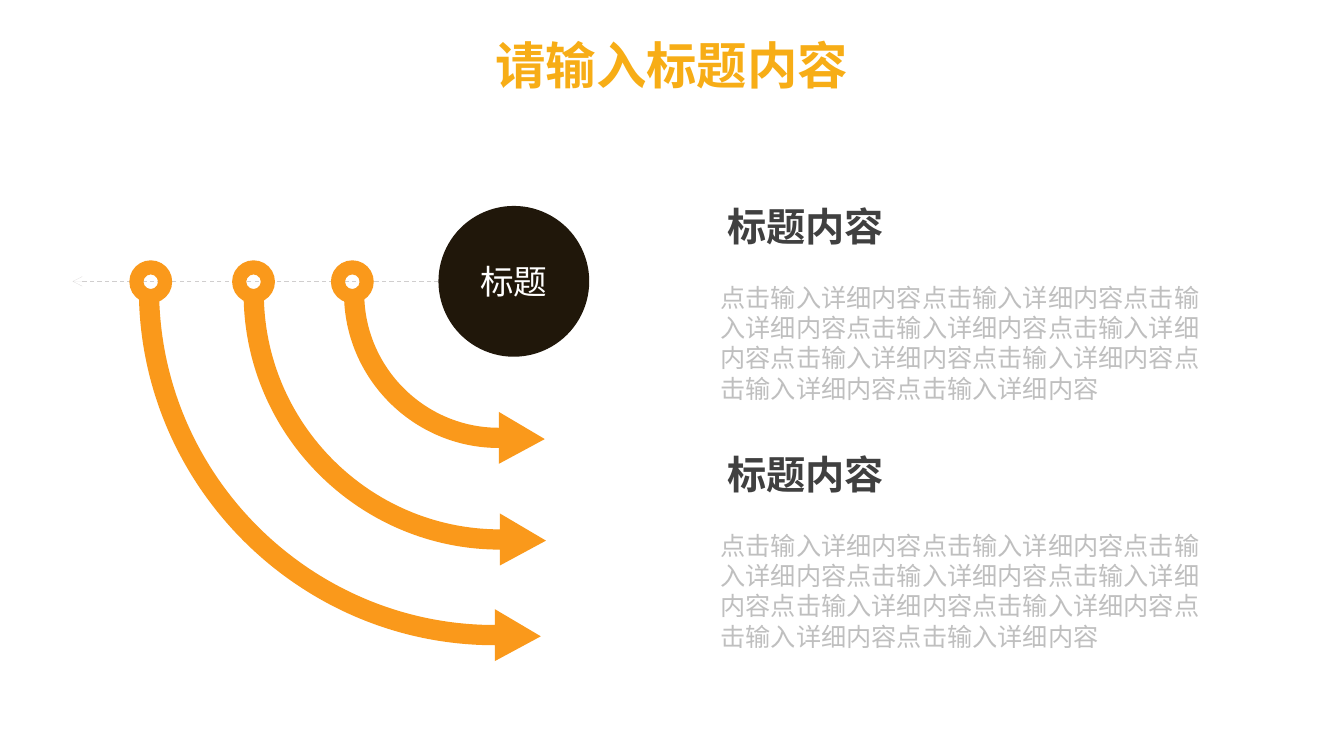
from lxml import etree
from pptx import Presentation
from pptx.dml.color import RGBColor
from pptx.enum.dml import MSO_LINE
from pptx.enum.shapes import MSO_CONNECTOR, MSO_SHAPE
from pptx.enum.text import MSO_ANCHOR, MSO_AUTO_SIZE, PP_ALIGN
from pptx.oxml.ns import qn
from pptx.util import Cm, Pt

CENTER, LEFT = PP_ALIGN.CENTER, PP_ALIGN.LEFT
MIDDLE = MSO_ANCHOR.MIDDLE
FIT_SHAPE = MSO_AUTO_SIZE.SHAPE_TO_FIT_TEXT
STRAIGHT = MSO_CONNECTOR.STRAIGHT
OVAL, DONUT = MSO_SHAPE.OVAL, MSO_SHAPE.DONUT
DASH = MSO_LINE.DASH

FONT = "Noto Sans CJK SC"
GOLD = RGBColor(0xF7, 0xAD, 0x16)
ORANGE = RGBColor(0xFA, 0x99, 0x1B)
DARK = RGBColor(0x20, 0x17, 0x0A)
WHITE = RGBColor(0xFF, 0xFF, 0xFF)
HEADING_GREY = RGBColor(0x40, 0x40, 0x40)
BODY_GREY = RGBColor(0xBF, 0xBF, 0xBF)
LINE_GREY = RGBColor(0xD0, 0xCE, 0xCE)

# Content (lengths in centimetres)
TITLE = "请输入标题内容"
CIRCLE_LABEL = "标题"
SECTIONS = [
    ("标题内容", "点击输入详细内容" * 9),
    ("标题内容", "点击输入详细内容" * 9),
]
# Ring centre x, arc centre x, arc centre y, outer radius
ARROWS = [
    (8.88, 12.57, 7.39, 3.9),
    (6.39, 12.6, 7.39, 6.46),
    (3.8, 12.47, 7.29, 8.97),
]
AXIS_Y, AXIS_START, AXIS_END = 7.09, 11.05, 1.83
CIRCLE_SIZE = 3.8
RING_Y, RING_SIZE, RING_THICKNESS = 7.1, 1.08, 0.33
BAND, HEAD_FLARE, HEAD_LENGTH = 0.51, 0.4, 1.16
ARC_HANDLE = 0.55  # Bezier handle of a quarter circle, per radius
SECTION_LEFT, SECTION_TOP, SECTION_PITCH = 17.91, 4.96, 6.25
BODY_OFFSET = 2.01


def write_text(shape, text, size, color, bold=False, align=CENTER,
               wrap=True, auto_size=None):
    frame = shape.text_frame
    frame.word_wrap = wrap
    frame.vertical_anchor = MIDDLE
    if auto_size is not None:
        frame.auto_size = auto_size
    paragraph = frame.paragraphs[0]
    paragraph.alignment = align
    run = paragraph.add_run()
    run.text = text
    run.font.size = Pt(size)
    run.font.bold = bold
    run.font.color.rgb = color
    run.font.name = FONT
    east_asian = etree.SubElement(run.font._element, qn("a:ea"))
    east_asian.set("typeface", FONT)


def paint(shape, color):
    shape.shadow.inherit = False
    shape.fill.solid()
    shape.fill.fore_color.rgb = color
    shape.line.fill.background()


def quarter_arc(center_x, center_y, radius):
    """Bezier points from the left of the circle down to its bottom."""
    handle = radius * ARC_HANDLE
    return [
        (center_x - radius, center_y),
        (center_x - radius, center_y + handle),
        (center_x - handle, center_y + radius),
        (center_x, center_y + radius),
    ]


def curve_segments(shape, first):
    """Turn three line segments, starting at index first, into one curve."""
    lines = list(shape._element.iter(qn("a:lnTo")))[first:first + 3]
    curve = etree.Element(qn("a:cubicBezTo"))
    lines[0].addprevious(curve)
    for line in lines:
        curve.append(line[0])
        line.getparent().remove(line)


def add_curved_arrow(slide, center_x, center_y, outer):
    inner = outer - BAND
    head = [
        (center_x, center_y + outer + HEAD_FLARE),
        (center_x + HEAD_LENGTH, center_y + (outer + inner) / 2 + 0.03),
        (center_x, center_y + inner - HEAD_FLARE),
    ]
    outline = (quarter_arc(center_x, center_y, outer) + head
               + quarter_arc(center_x, center_y, inner)[::-1])
    points = [(Cm(x), Cm(y)) for x, y in outline]
    builder = slide.shapes.build_freeform(*points[0])
    builder.add_line_segments(points[1:], close=True)
    arrow = builder.convert_to_shape()
    curve_segments(arrow, 7)
    curve_segments(arrow, 0)
    paint(arrow, ORANGE)


def add_ring(slide, center_x):
    ring = slide.shapes.add_shape(
        DONUT, Cm(center_x - RING_SIZE / 2), Cm(RING_Y - RING_SIZE / 2),
        Cm(RING_SIZE), Cm(RING_SIZE))
    ring.adjustments[0] = RING_THICKNESS
    paint(ring, ORANGE)


def add_axis(slide):
    axis = slide.shapes.add_connector(
        STRAIGHT, Cm(AXIS_START), Cm(AXIS_Y), Cm(AXIS_END), Cm(AXIS_Y))
    axis.line.color.rgb = LINE_GREY
    axis.line.dash_style = DASH
    line = axis.line._get_or_add_ln()
    line.set("w", "0")  # hairline
    etree.SubElement(line, qn("a:tailEnd")).set("type", "arrow")
    etree.SubElement(axis._element.spPr, qn("a:effectLst"))


def main():
    presentation = Presentation()
    presentation.slide_width, presentation.slide_height = Cm(33.87), Cm(19.05)
    slide = presentation.slides.add_slide(presentation.slide_layouts[5])

    # Title
    title = slide.shapes.title
    title.left, title.top, title.width, title.height = Cm(12.04), Cm(0.71), Cm(9.78), Cm(1.8)
    write_text(title, TITLE, 36, GOLD, bold=True, wrap=False, auto_size=FIT_SHAPE)

    # Dark circle and dashed axis
    circle = slide.shapes.add_shape(
        OVAL, Cm(AXIS_START), Cm(AXIS_Y - CIRCLE_SIZE / 2),
        Cm(CIRCLE_SIZE), Cm(CIRCLE_SIZE))
    paint(circle, DARK)
    write_text(circle, CIRCLE_LABEL, 24, WHITE)
    add_axis(slide)

    # Curved arrows, each starting at a ring
    for ring_x, center_x, center_y, outer in ARROWS:
        add_curved_arrow(slide, center_x, center_y, outer)
        add_ring(slide, ring_x)

    # Text sections
    for index, (heading, body) in enumerate(SECTIONS):
        top = SECTION_TOP + index * SECTION_PITCH
        heading_box = slide.shapes.add_textbox(
            Cm(SECTION_LEFT), Cm(top), Cm(4.78), Cm(1.45))
        write_text(heading_box, heading, 28, HEADING_GREY, bold=True,
                   wrap=False, auto_size=FIT_SHAPE)
        body_box = slide.shapes.add_textbox(
            Cm(SECTION_LEFT), Cm(top + BODY_OFFSET), Cm(12.83), Cm(3.33))
        write_text(body_box, body, 18, BODY_GREY, align=LEFT, auto_size=FIT_SHAPE)

    presentation.save("out.pptx")


if __name__ == "__main__":
    main()
